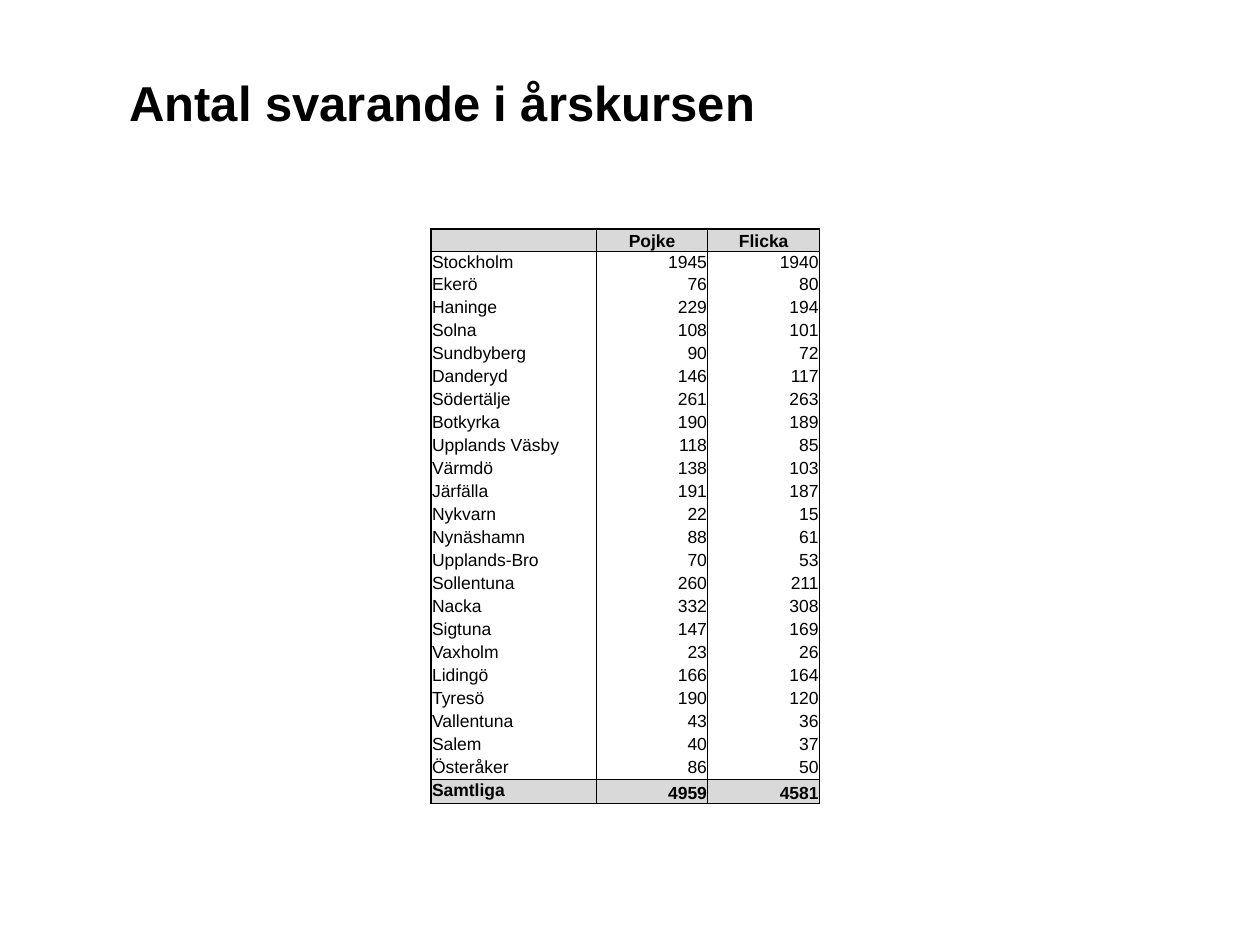
from lxml import etree
from pptx import Presentation
from pptx.dml.color import RGBColor
from pptx.enum.text import MSO_ANCHOR, PP_ALIGN
from pptx.oxml.ns import qn
from pptx.util import Cm, Pt

MIDDLE, TOP, BOTTOM = MSO_ANCHOR.MIDDLE, MSO_ANCHOR.TOP, MSO_ANCHOR.BOTTOM
LEFT, CENTER, RIGHT = PP_ALIGN.LEFT, PP_ALIGN.CENTER, PP_ALIGN.RIGHT

COLORS = {"text": "000000", "border": "000000", "band": "D9D9D9"}
FONT = "Arial"
TABLE_SIZE = 10
THICK, THIN = 1, 0.5

HEADER = ("", "Pojke", "Flicka")
MUNICIPALITIES = [
    ("Stockholm", 1945, 1940),
    ("Ekerö", 76, 80),
    ("Haninge", 229, 194),
    ("Solna", 108, 101),
    ("Sundbyberg", 90, 72),
    ("Danderyd", 146, 117),
    ("Södertälje", 261, 263),
    ("Botkyrka", 190, 189),
    ("Upplands Väsby", 118, 85),
    ("Värmdö", 138, 103),
    ("Järfälla", 191, 187),
    ("Nykvarn", 22, 15),
    ("Nynäshamn", 88, 61),
    ("Upplands-Bro", 70, 53),
    ("Sollentuna", 260, 211),
    ("Nacka", 332, 308),
    ("Sigtuna", 147, 169),
    ("Vaxholm", 23, 26),
    ("Lidingö", 166, 164),
    ("Tyresö", 190, 120),
    ("Vallentuna", 43, 36),
    ("Salem", 40, 37),
    ("Österåker", 86, 50),
]
TOTAL = ("Samtliga", 4959, 4581)


def format_text(paragraph, size, bold):
    for run in paragraph.runs:
        run.font.name = FONT
        run.font.size = Pt(size)
        run.font.bold = bold
        run.font.color.rgb = RGBColor.from_string(COLORS["text"])


def set_borders(cell, widths):
    properties = cell._tc.get_or_add_tcPr()
    for side in "LRTB":
        width = widths.get(side, 0)
        line = etree.SubElement(properties, qn(f"a:ln{side}"), w=str(Pt(width)))
        if width:
            fill = etree.SubElement(line, qn("a:solidFill"))
            etree.SubElement(fill, qn("a:srgbClr"), val=COLORS["border"])
        else:
            etree.SubElement(line, qn("a:noFill"))


def fill_cell(cell, text, alignment, anchor, banded):
    cell.margin_left = cell.margin_right = cell.margin_top = Cm(0.02)
    cell.margin_bottom = 0
    cell.vertical_anchor = anchor
    cell.text_frame.text = text
    paragraph = cell.text_frame.paragraphs[0]
    paragraph.alignment = alignment
    format_text(paragraph, TABLE_SIZE, banded)
    if not text:
        etree.SubElement(paragraph._p, qn("a:endParaRPr"), sz=str(TABLE_SIZE * 100))
    if banded:
        cell.fill.solid()
        cell.fill.fore_color.rgb = RGBColor.from_string(COLORS["band"])
    else:
        cell.fill.background()


def add_title(slide, left, top, width, height):
    shape = slide.shapes.add_textbox(left, top, width, height)
    text_frame = shape.text_frame
    text_frame.word_wrap = True
    text_frame.vertical_anchor = MIDDLE
    text_frame.text = "Antal svarande i årskursen"
    format_text(text_frame.paragraphs[0], 28, True)


def add_respondent_table(slide, left, top, width, height):
    rows = [HEADER, *MUNICIPALITIES, TOTAL]
    last = len(rows) - 1
    shape = slide.shapes.add_table(len(rows), len(HEADER), left, top, width, height)
    table = shape.table
    table.first_row = table.horz_banding = False

    count_width = Cm(2.25)
    column_widths = (width - 2 * count_width, count_width, count_width)
    for column, column_width in zip(table.columns, column_widths):
        column.width = column_width

    header_height, total_height = Cm(0.43), Cm(0.48)
    body_height = (height - header_height - total_height) // len(MUNICIPALITIES)
    for row in table.rows:
        row.height = body_height
    table.rows[0].height = header_height
    table.rows[last].height = total_height

    for row_index, values in enumerate(rows):
        banded = row_index in (0, last)
        for column_index, value in enumerate(values):
            cell = table.cell(row_index, column_index)
            widths = {
                "L": THIN if column_index == 2 else THICK,
                "R": THIN if column_index == 1 else THICK,
            }
            if row_index in (0, 1, last):
                widths["T"] = THICK
            if row_index in (0, last - 1, last):
                widths["B"] = THICK
            set_borders(cell, widths)
            if column_index == 0:
                alignment = LEFT
            else:
                alignment = CENTER if row_index == 0 else RIGHT
            anchor = BOTTOM if banded and column_index else TOP
            fill_cell(cell, str(value), alignment, anchor, banded)


def main():
    presentation = Presentation()
    presentation.slide_width = Cm(25.4)
    presentation.slide_height = Cm(19.05)
    slide = presentation.slides.add_slide(presentation.slide_layouts[6])
    add_title(slide, Cm(2.36), Cm(0.94), Cm(20.5), Cm(2.24))
    add_respondent_table(slide, Cm(8.69), Cm(4.62), Cm(7.83), Cm(11.56))
    presentation.save("out.pptx")


if __name__ == "__main__":
    main()
